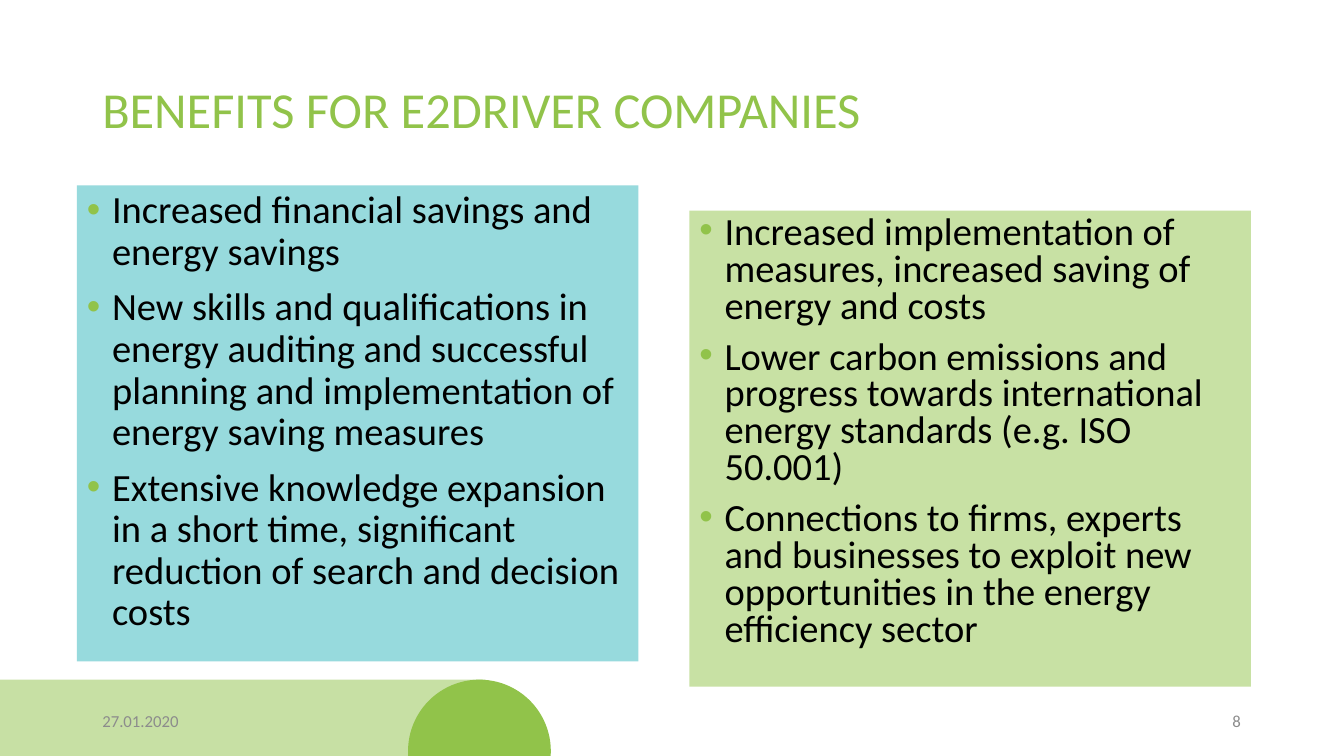
from lxml import etree
from pptx import Presentation
from pptx.dml.color import RGBColor
from pptx.enum.shapes import MSO_SHAPE
from pptx.enum.text import MSO_ANCHOR, PP_ALIGN
from pptx.oxml.ns import qn
from pptx.util import Pt

RECTANGLE, OVAL = MSO_SHAPE.RECTANGLE, MSO_SHAPE.OVAL
TOP, MIDDLE = MSO_ANCHOR.TOP, MSO_ANCHOR.MIDDLE
LEFT, RIGHT = PP_ALIGN.LEFT, PP_ALIGN.RIGHT
GREEN, GREY, BLACK = "91C34A", "8C8C8C", "000000"


def color(hex_string):
    return RGBColor.from_string(hex_string)


def add_block(kind, left, top, width, height, fill):
    block = slide.shapes.add_shape(kind, Pt(left), Pt(top), Pt(width), Pt(height))
    block.shadow.inherit = False
    block.fill.solid()
    block.fill.fore_color.rgb = color(fill)
    block.line.fill.background()
    return block


deck = Presentation()
deck.slide_width, deck.slide_height = Pt(960), Pt(540)
slide = deck.slides.add_slide(deck.slide_layouts[6])

footer_band = add_block(RECTANGLE, 0, 485.5, 346.5, 54.5, GREEN)
band_color = footer_band.fill._xPr.find(".//" + qn("a:srgbClr"))
etree.SubElement(band_color, qn("a:alpha"), val="50000")
add_block(OVAL, 291.5, 485.5, 102, 102, GREEN)

benefits = [
    (55, 132.5, "97DADD", 0.9, [
        "Increased financial savings and energy savings",
        "New skills and qualifications in energy auditing and successful "
        "planning and implementation of energy saving measures",
        "Extensive knowledge expansion in a short time, significant "
        "reduction of search and decision costs",
    ]),
    (492.5, 150.5, "C8E1A4", 0.8, [
        "Increased implementation of measures, increased saving of energy and costs",
        "Lower carbon emissions and progress towards international "
        "energy standards (e.g. ISO 50.001)",
        "Connections to firms, experts and businesses to exploit new "
        "opportunities in the energy efficiency sector",
    ]),
]
for left, top, fill, line_spacing, points in benefits:
    panel = add_block(RECTANGLE, left, top, 401, 340, fill).text_frame
    panel.word_wrap = True
    panel.vertical_anchor = TOP
    panel.text = "\n".join(points)
    for index, point in enumerate(panel.paragraphs):
        point.alignment = LEFT
        point.line_spacing = line_spacing
        point.space_before = Pt(10 if index else 0)
        properties = point._p.get_or_add_pPr()
        properties.set("marL", str(Pt(18)))
        properties.set("indent", str(Pt(-18)))
        bullet_color = etree.SubElement(properties, qn("a:buClr"))
        etree.SubElement(bullet_color, qn("a:srgbClr"), val=GREEN)
        etree.SubElement(properties, qn("a:buFont"), typeface="Arial")
        etree.SubElement(properties, qn("a:buChar"), char="•")
        point.font.name = "Calibri"
        point.font.size = Pt(27.5)
        point.font.color.rgb = color(BLACK)

labels = [
    ("BENEFITS FOR E2DRIVER COMPANIES", 66, 28, 664.5, 104.5, 36, GREEN, LEFT),
    ("27.01.2020", 66, 500.5, 216, 29, 12, GREY, LEFT),
    ("8", 782, 500.5, 111.5, 29, 12, GREY, RIGHT),
]
for text, left, top, width, height, size, ink, alignment in labels:
    label = slide.shapes.add_textbox(Pt(left), Pt(top), Pt(width), Pt(height)).text_frame
    label.word_wrap = True
    label.vertical_anchor = MIDDLE
    label.text = text
    line = label.paragraphs[0]
    line.alignment = alignment
    line.line_spacing = 0.9 if size == 36 else 1.0
    line.font.name = "Calibri"
    line.font.size = Pt(size)
    line.font.color.rgb = color(ink)

deck.save("out.pptx")
